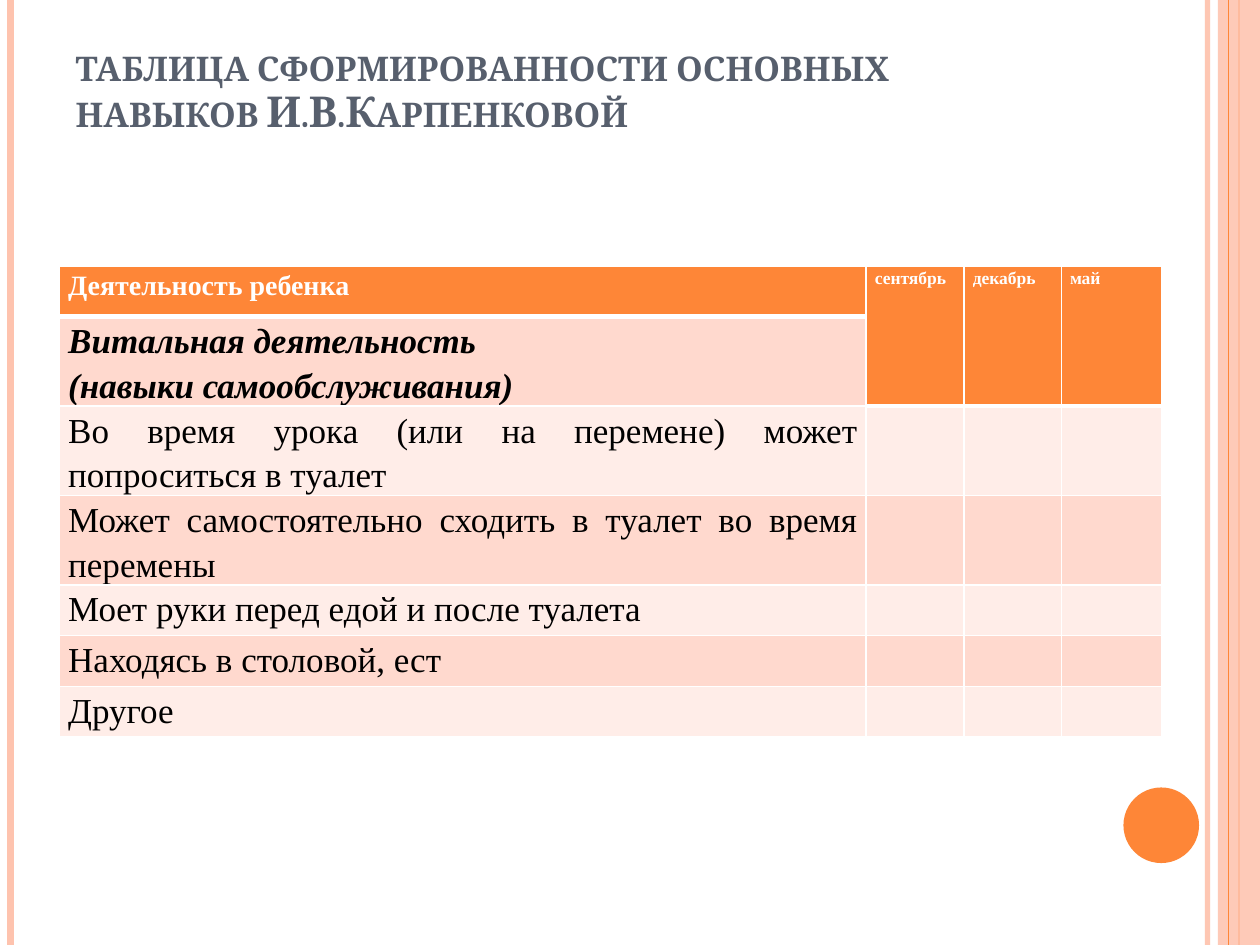
from dataclasses import dataclass

from lxml.etree import SubElement
from pptx import Presentation
from pptx.dml.color import RGBColor
from pptx.enum.shapes import MSO_CONNECTOR, MSO_SHAPE
from pptx.enum.text import MSO_ANCHOR, MSO_AUTO_SIZE, PP_ALIGN
from pptx.oxml.ns import qn
from pptx.util import Pt


@dataclass(frozen=True)
class Theme:
    orange: str = "FE8637"
    peach: str = "FEC3AE"
    dark_band: str = "FFD9CE"
    light_band: str = "FFEDE8"
    slate: str = "575F6D"
    white: str = "FFFFFF"
    black: str = "000000"
    title_font: str = "Cambria"
    table_font: str = "Times New Roman"
    title_size: float = 24.3
    header_size: float = 16
    month_size: float = 10
    body_size: float = 20


class SlideBuilder:
    def __init__(self, slide, theme, width, height):
        self.slide = slide
        self.theme = theme
        self.width = width
        self.height = height

    def set_alpha(self, fill_parent, percent):
        color = fill_parent.find(".//" + qn("a:srgbClr"))
        SubElement(color, qn("a:alpha")).set("val", str(percent * 1000))

    def add_stripe(self, x, color, weight, alpha=100):
        line = self.slide.shapes.add_connector(
            MSO_CONNECTOR.STRAIGHT, Pt(x), Pt(0), Pt(x), Pt(self.height))
        line.line.color.rgb = RGBColor.from_string(color)
        line.line.width = Pt(weight)
        properties = line._element.spPr
        SubElement(properties, qn("a:effectLst"))
        if alpha < 100:
            self.set_alpha(properties, alpha)

    def add_shape(self, kind, left, top, width, height, color, alpha=100):
        shape = self.slide.shapes.add_shape(
            kind, Pt(left), Pt(top), Pt(width), Pt(height))
        shape.shadow.inherit = False
        shape.fill.solid()
        shape.fill.fore_color.rgb = RGBColor.from_string(color)
        shape.line.fill.background()
        if alpha < 100:
            self.set_alpha(shape._element.spPr, alpha)

    def format_font(self, paragraph, name, size, color, bold=False, italic=False):
        font = paragraph.font
        font.name = name
        font.size = Pt(size)
        font.color.rgb = RGBColor.from_string(color)
        font.bold = bold
        font.italic = italic

    def add_title(self, text, left, top, width, height):
        title = self.slide.shapes.title
        title.left, title.top = Pt(left), Pt(top)
        title.width, title.height = Pt(width), Pt(height)
        frame = title.text_frame
        frame.text = text
        frame.word_wrap = True
        frame.auto_size = MSO_AUTO_SIZE.NONE
        frame.vertical_anchor = MSO_ANCHOR.BOTTOM
        frame.margin_bottom = Pt(33.5)
        paragraph = frame.paragraphs[0]
        paragraph.alignment = PP_ALIGN.LEFT
        paragraph.line_spacing = 0.9
        self.format_font(paragraph, self.theme.title_font, self.theme.title_size,
                         self.theme.slate, bold=True)
        paragraph.runs[0].font._element.set("cap", "small")

    def add_table(self, left, top, column_widths, row_heights):
        frame = self.slide.shapes.add_table(
            len(row_heights), len(column_widths), Pt(left), Pt(top),
            Pt(sum(column_widths)), Pt(sum(row_heights)))
        table = frame.table
        table.first_row = False
        table.horz_banding = False
        for column, width in zip(table.columns, column_widths):
            column.width = Pt(width)
        for row, height in zip(table.rows, row_heights):
            row.height = Pt(height)
        return table

    def format_cell(self, cell, fill, top_border=1, bottom_border=1):
        cell.margin_left = cell.margin_right = Pt(5)
        cell.margin_top = cell.margin_bottom = Pt(0)
        properties = cell._tc.get_or_add_tcPr()
        borders = {"a:lnL": 1, "a:lnR": 1, "a:lnT": top_border, "a:lnB": bottom_border}
        for tag, weight in borders.items():
            border = SubElement(properties, qn(tag), w=str(Pt(weight)))
            solid = SubElement(border, qn("a:solidFill"))
            SubElement(solid, qn("a:srgbClr"), val=self.theme.white)
        cell.fill.solid()
        cell.fill.fore_color.rgb = RGBColor.from_string(fill)

    def write_cell(self, cell, text, size, color, bold=False, italic=False,
                   alignment=PP_ALIGN.JUSTIFY):
        cell.text_frame.text = text
        for paragraph in cell.text_frame.paragraphs:
            paragraph.alignment = alignment
            paragraph.line_spacing = 1.15
            self.format_font(paragraph, self.theme.table_font, size, color, bold, italic)


def add_skills_table(builder):
    theme = builder.theme
    months = ["сентябрь", "декабрь", "май"]
    activities = [
        "Витальная деятельность\n(навыки самообслуживания)",
        "Во время урока (или на перемене) может попроситься в туалет",
        "Может самостоятельно сходить в туалет во время перемены",
        "Моет руки перед едой и после туалета",
        "Находясь в столовой, ест",
        "Другое",
    ]
    single, double = 29, 51
    table = builder.add_table(34, 152, [461, 56, 55.5, 57.5],
                              [single] + [double] * 3 + [single] * 3)

    for row in range(len(table.rows)):
        for column in range(len(table.columns)):
            header_end = 0 if column == 0 else 1
            if row <= header_end:
                fill = theme.orange
            else:
                fill = theme.dark_band if row % 2 else theme.light_band
            builder.format_cell(table.cell(row, column), fill,
                                top_border=3 if row == header_end + 1 else 1,
                                bottom_border=3 if row == header_end else 1)

    builder.write_cell(table.cell(0, 0), "Деятельность ребенка", theme.header_size,
                       theme.white, bold=True, alignment=PP_ALIGN.LEFT)
    for column, month in enumerate(months, start=1):
        table.cell(0, column).merge(table.cell(1, column))
        builder.write_cell(table.cell(0, column), month, theme.month_size,
                           theme.white, bold=True)
    for row, activity in enumerate(activities, start=1):
        is_section = row == 1
        builder.write_cell(table.cell(row, 0), activity, theme.body_size,
                           theme.black, bold=is_section, italic=is_section)


def main():
    theme = Theme()
    width, height = 720, 540
    presentation = Presentation()
    presentation.slide_width, presentation.slide_height = Pt(width), Pt(height)
    slide = presentation.slides.add_slide(presentation.slide_layouts[5])
    builder = SlideBuilder(slide, theme, width, height)

    builder.add_stripe(690, theme.peach, 3, alpha=93)
    builder.add_stripe(6, theme.peach, 4.5)
    builder.add_stripe(708, theme.orange, 1.5)
    builder.add_shape(MSO_SHAPE.RECTANGLE, 696, 0, 24, height, theme.peach, alpha=87)
    builder.add_stripe(702, theme.orange, 0.75)
    builder.add_shape(MSO_SHAPE.OVAL, 642, 450, 43.2, 43.2, theme.orange)
    builder.add_title("таблица сформированности основных навыков И.В.Карпенковой",
                      36, 21.6, 588, 90)
    add_skills_table(builder)
    presentation.save("out.pptx")


if __name__ == "__main__":
    main()
